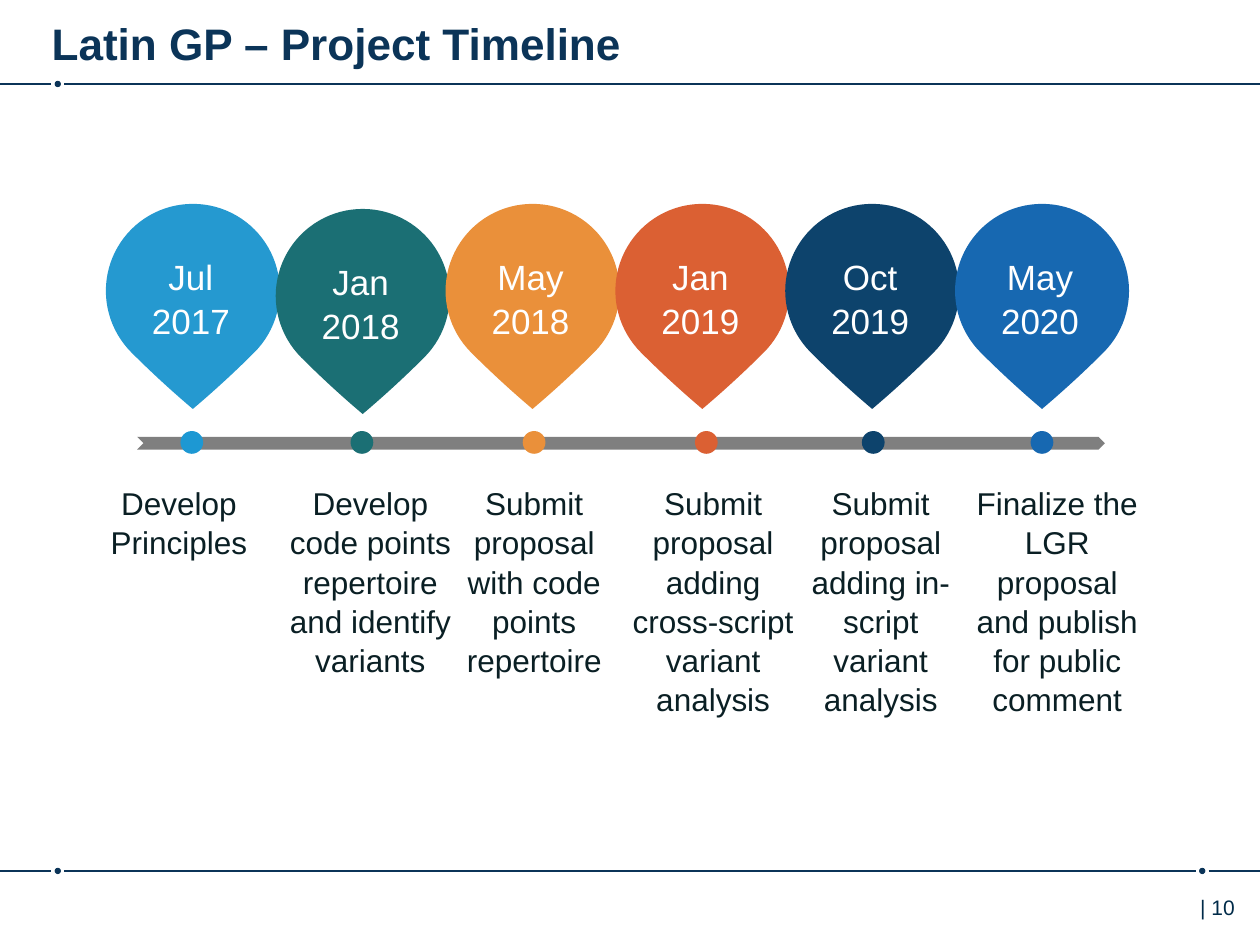
from dataclasses import dataclass

from lxml.etree import SubElement
from pptx import Presentation
from pptx.dml.color import RGBColor
from pptx.enum.shapes import MSO_CONNECTOR, MSO_SHAPE
from pptx.enum.text import MSO_ANCHOR, MSO_AUTO_SIZE, PP_ALIGN
from pptx.oxml.ns import qn
from pptx.util import Pt


@dataclass(frozen=True)
class Theme:
    """Hold the colours, font and type sizes of the slide."""

    font: str = "Arial"
    navy: str = "0B3458"
    footer: str = "002B49"
    caption: str = "0A1F24"
    white: str = "FFFFFF"
    bar: str = "7F7F7F"
    title_size: float = 25.2
    date_size: float = 20
    caption_size: float = 18
    footer_size: float = 12


THEME = Theme()
WIDTH, HEIGHT = 720, 540
PIN_LEFT, PIN_STEP, PIN_SIZE = 60.5, 97.05, 99.4
PIN_TOP, DATE_OFFSET = 116.5, 25.2
DOT_SIZE = 13
LINE_SPACING = 1.04

MILESTONES = [
    ("Jul", "2017", "2599D0", "1D98D3", 0, 109.6, (47.5, 109.4), "Develop Principles"),
    ("Jan", "2018", "1B6F74", "1B6F74", 2.9, 206.8, (155.5, 112.3),
     "Develop code points repertoire and identify variants"),
    ("May", "2018", "EA903A", "EA903A", 0, 305.2, (258.5, 93.6),
     "Submit proposal with code points repertoire"),
    ("Jan", "2019", "DB6033", "DB6033", 0, 403.6, (352.8, 109.4),
     "Submit proposal adding cross-script variant analysis"),
    ("Oct", "2019", "0D436C", "0D436C", 0, 499, (456.5, 93.6),
     "Submit proposal adding in-script variant analysis"),
    ("May", "2020", "1768B1", "1768B1", 0, 595.4, (549.4, 109.4),
     "Finalize the LGR proposal and publish for public comment"),
]


def apply_format(target, values):
    """Set each named attribute of the target."""
    for name, value in values.items():
        setattr(target, name, value)


def write_text(text_frame, lines, size, color, bold=False, **paragraph_format):
    """Fill a text frame with one formatted paragraph per line."""
    text_frame.text = "\n".join(lines)
    for paragraph in text_frame.paragraphs:
        apply_format(paragraph, paragraph_format)
        apply_format(paragraph.font, {"name": THEME.font, "size": Pt(size), "bold": bold})
        paragraph.font.color.rgb = RGBColor.from_string(color)


def add_text(slide, box, lines, size, color, **paragraph_format):
    """Add a wrapping text box."""
    text_frame = slide.shapes.add_textbox(*map(Pt, box)).text_frame
    text_frame.word_wrap = True
    write_text(text_frame, lines, size, color, **paragraph_format)


def add_filled(slide, kind, box, color):
    """Add a flat preset shape without an outline."""
    shape = slide.shapes.add_shape(kind, *map(Pt, box))
    shape.shadow.inherit = False
    shape.fill.solid()
    shape.fill.fore_color.rgb = RGBColor.from_string(color)
    shape.line.fill.background()
    return shape


def add_dot(slide, center_x, center_y, size, color):
    """Add a circle around its centre."""
    box = (center_x - size / 2, center_y - size / 2, size, size)
    add_filled(slide, MSO_SHAPE.OVAL, box, color)


def add_rule(slide, y, dot_centers):
    """Draw a full-width rule that is interrupted by small dots."""
    gap = 3.6
    starts = [0] + [center + gap for center in dot_centers]
    ends = [center - gap for center in dot_centers] + [WIDTH]
    for start, end in zip(starts, ends):
        connector = slide.shapes.add_connector(
            MSO_CONNECTOR.STRAIGHT, Pt(start), Pt(y), Pt(end), Pt(y))
        connector.line.width = Pt(1)
        connector.line.color.rgb = RGBColor.from_string(THEME.navy)
        SubElement(connector._element.spPr, qn("a:effectLst"))
    for center in dot_centers:
        add_dot(slide, center, y, 3.6, THEME.navy)


def set_title(slide, text):
    """Place and format the title placeholder."""
    title = slide.shapes.title
    apply_format(title, {"left": Pt(29.5), "top": Pt(3.6),
                         "width": Pt(630.7), "height": Pt(35.3)})
    apply_format(title.text_frame, {
        "margin_left": 0, "margin_right": 0, "margin_top": Pt(6), "margin_bottom": 0,
        "vertical_anchor": MSO_ANCHOR.TOP, "auto_size": MSO_AUTO_SIZE.NONE,
        "word_wrap": True})
    write_text(title.text_frame, [text], THEME.title_size, THEME.navy,
               bold=True, alignment=PP_ALIGN.LEFT)


def add_pin(slide, left, top, color, date):
    """Add a teardrop pin that points down and carries a date."""
    pin = add_filled(slide, MSO_SHAPE.TEAR, (left, top, PIN_SIZE, PIN_SIZE), color)
    pin.rotation = 135
    pin.adjustments[0] = 0.96
    add_text(slide, (left + 1.8, top + DATE_OFFSET, 93.6, 51), date, THEME.date_size,
             THEME.white, alignment=PP_ALIGN.CENTER, line_spacing=LINE_SPACING)


def add_timeline(slide):
    """Build the bar with its pins, dots and captions."""
    bar = add_filled(slide, MSO_SHAPE.CHEVRON, (78.4, 249.7, 553, 7.2), THEME.bar)
    bar.adjustments[0] = 0.5
    for index, milestone in enumerate(MILESTONES):
        month, year, pin_color, dot_color, drop, dot_x, (left, width), caption = milestone
        add_dot(slide, dot_x, 252.8, DOT_SIZE, dot_color)
        add_pin(slide, PIN_LEFT + index * PIN_STEP, PIN_TOP + drop, pin_color, (month, year))
        add_text(slide, (left, 272.2, width, 124), [caption], THEME.caption_size,
                 THEME.caption, alignment=PP_ALIGN.CENTER, line_spacing=LINE_SPACING)


def main():
    """Build and save the presentation."""
    presentation = Presentation()
    apply_format(presentation, {"slide_width": Pt(WIDTH), "slide_height": Pt(HEIGHT)})
    slide = presentation.slides.add_slide(presentation.slide_layouts[5])
    add_rule(slide, 48, [33])
    add_rule(slide, 497.7, [33, 687])
    add_text(slide, (678.7, 507.6, 41.3, 28.8), ["| 10"], THEME.footer_size, THEME.footer)
    set_title(slide, "Latin GP – Project Timeline")
    add_timeline(slide)
    presentation.save("out.pptx")


if __name__ == "__main__":
    main()
